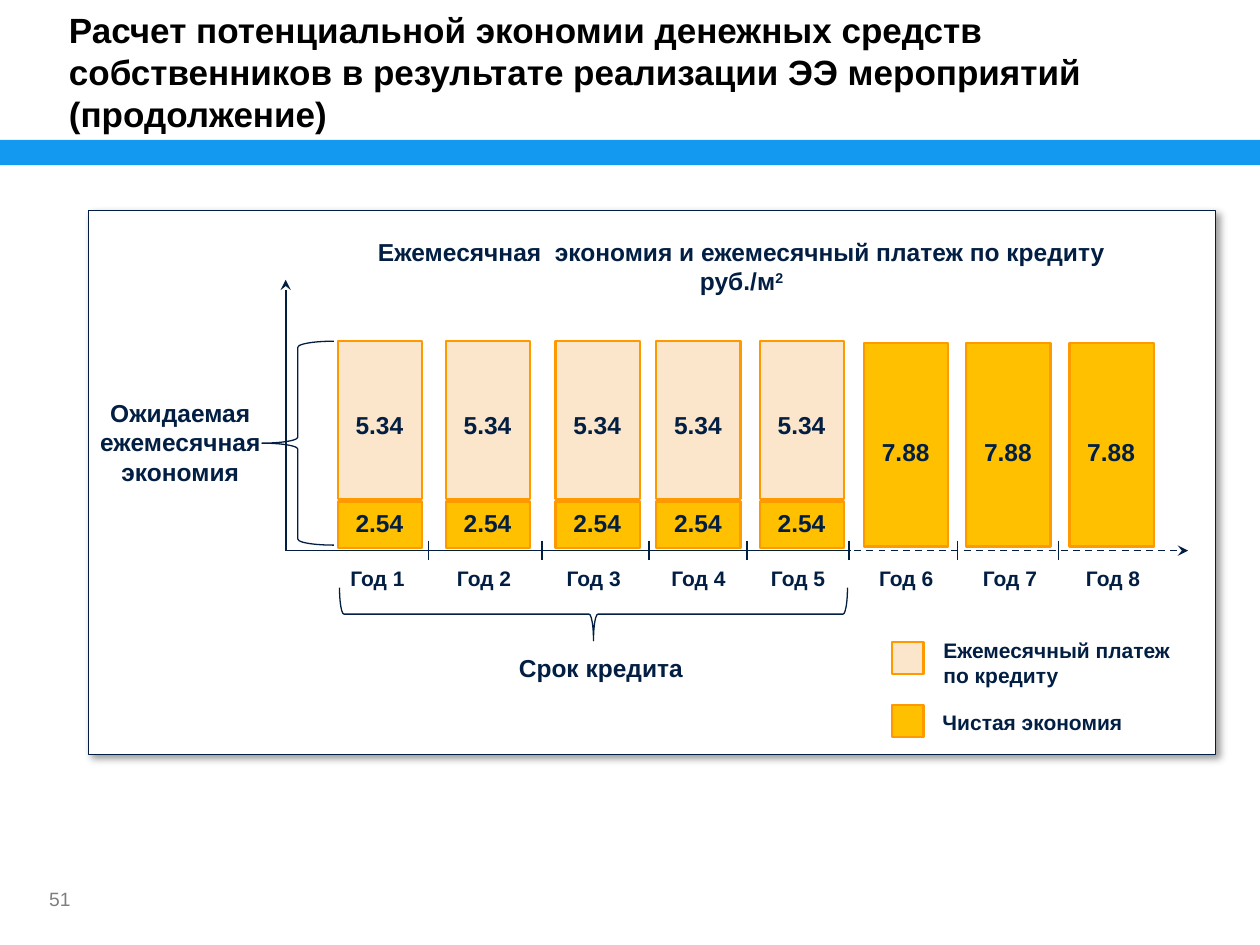
from dataclasses import dataclass
from typing import NamedTuple

from lxml.etree import SubElement
from pptx import Presentation
from pptx.dml.color import RGBColor
from pptx.enum.dml import MSO_LINE
from pptx.enum.shapes import MSO_CONNECTOR, MSO_SHAPE
from pptx.enum.text import MSO_ANCHOR, MSO_AUTO_SIZE, PP_ALIGN
from pptx.oxml.ns import qn
from pptx.util import Cm, Pt


@dataclass(frozen=True)
class Theme:
    font: str = "Arial"
    ink: str = "021F43"
    black: str = "000000"
    grey: str = "7F7F7F"
    white: str = "FFFFFF"
    band: str = "139AF0"
    payment: str = "FBE6CB"
    saving: str = "FFC000"
    outline: str = "FF9900"
    title_size: float = 20
    heading_size: float = 14
    label_size: float = 12
    number_size: float = 11
    thin: float = 0.75
    axis: float = 1
    bar: float = 1.25


class Box(NamedTuple):
    left: float
    top: float
    width: float
    height: float


class Point(NamedTuple):
    x: float
    y: float


class Segment(NamedTuple):
    top: float
    height: float
    fill: str
    value: str
    value_top: float


class Year(NamedTuple):
    bar_left: float
    label_left: float
    segments: tuple[Segment, ...]


class LegendEntry(NamedTuple):
    swatch: Box
    fill: str
    label: Box
    text: str


THEME = Theme()
BAR_WIDTH = 1.7
AXIS_Y = 11.1
ORIGIN = Point(5.76, AXIS_Y)
TICK_TOP, TICK_BOTTOM = 10.9, 11.28
TICKS = (8.64, 10.92, 13.08, 15.06, 17.12, 19.3, 21.34)

LOAN = (
    Segment(6.88, 3.18, THEME.payment, "5.34", 8.15),
    Segment(10.11, 0.94, THEME.saving, "2.54", 10.11),
)
AFTER_LOAN = (Segment(6.91, 4.11, THEME.saving, "7.88", 8.69),)

YEARS = (
    Year(6.81, 6.71, LOAN),
    Year(8.99, 8.86, LOAN),
    Year(11.2, 11.07, LOAN),
    Year(13.23, 13.18, LOAN),
    Year(15.32, 15.19, LOAN),
    Year(17.42, 17.37, AFTER_LOAN),
    Year(19.48, 19.46, AFTER_LOAN),
    Year(21.56, 21.54, AFTER_LOAN),
)

LEGEND = (
    LegendEntry(Box(17.98, 12.95, 0.64, 0.64), THEME.payment,
                Box(18.77, 12.73, 5.38, 1.27), "Ежемесячный платеж по кредиту"),
    LegendEntry(Box(17.98, 14.22, 0.64, 0.64), THEME.saving,
                Box(18.75, 14.17, 4.7, 0.76), "Чистая экономия"),
)


def add_figure(page, box: Box, kind=MSO_SHAPE.RECTANGLE, *, fill: str | None = None,
               line: str | None = None, width: float = THEME.thin, rotation: float = 0):
    shape = page.shapes.add_shape(kind, *map(Cm, box))
    shape.shadow.inherit = False
    shape.rotation = rotation
    if fill:
        shape.fill.solid()
        shape.fill.fore_color.rgb = RGBColor.from_string(fill)
    else:
        shape.fill.background()
    if line:
        shape.line.color.rgb = RGBColor.from_string(line)
        shape.line.width = Pt(width)
    else:
        shape.line.fill.background()
    return shape


def add_shadow(shape) -> None:
    effects = shape._element.spPr.find(qn("a:effectLst"))
    shadow = SubElement(effects, qn("a:outerShdw"), blurRad=str(Pt(4)), dist=str(Pt(3)),
                        dir="2700000", algn="tl", rotWithShape="0")
    colour = SubElement(shadow, qn("a:srgbClr"), val=THEME.black)
    SubElement(colour, qn("a:alpha"), val="40000")


def add_line(page, start: Point, end: Point, *, dashed: bool = False, arrow: bool = False) -> None:
    line = page.shapes.add_connector(MSO_CONNECTOR.STRAIGHT, *map(Cm, (*start, *end)))
    line.line.color.rgb = RGBColor.from_string(THEME.ink)
    line.line.width = Pt(THEME.axis)
    if dashed:
        line.line.dash_style = MSO_LINE.DASH
    properties = line._element.spPr
    if arrow:
        SubElement(properties.find(qn("a:ln")), qn("a:tailEnd"), type="stealth")
    SubElement(properties, qn("a:effectLst"))


def add_text(page, box: Box, text: str, *, size: float = THEME.heading_size,
             colour: str = THEME.ink, bold: bool = True, align=PP_ALIGN.CENTER,
             superscript: str = "") -> object:
    text_box = page.shapes.add_textbox(*map(Cm, box))
    frame = text_box.text_frame
    frame.word_wrap = True
    frame.auto_size = MSO_AUTO_SIZE.SHAPE_TO_FIT_TEXT
    frame.text = text
    if superscript:
        span = frame.paragraphs[-1].add_run()
        span.text = superscript
        span.font._element.set("baseline", "30000")
    for para in frame.paragraphs:
        para.alignment = align
        for span in para.runs:
            span.font.name = THEME.font
            span.font.size = Pt(size)
            span.font.bold = bold
            span.font.color.rgb = RGBColor.from_string(colour)
    return text_box


def add_year(page, number: int, year: Year) -> None:
    for segment in year.segments:
        add_figure(page, Box(year.bar_left, segment.top, BAR_WIDTH, segment.height),
                   fill=segment.fill, line=THEME.outline, width=THEME.bar)
        add_text(page, Box(year.bar_left + 0.04, segment.value_top, 1.6, 0.86), segment.value)
    add_text(page, Box(year.label_left, 11.28, 1.8, 0.76), f"Год {number}", size=THEME.label_size)


def add_legend_entry(page, entry: LegendEntry) -> None:
    add_figure(page, entry.swatch, fill=entry.fill, line=THEME.outline, width=THEME.bar)
    add_text(page, entry.label, entry.text, size=THEME.label_size, align=PP_ALIGN.LEFT)


def add_page_number(page) -> None:
    box = add_text(page, Box(0.99, 17.63, 1.52, 0.99), "51", size=THEME.number_size,
                   colour=THEME.grey, bold=False, align=PP_ALIGN.LEFT)
    frame = box.text_frame
    frame.auto_size = MSO_AUTO_SIZE.NONE
    frame.vertical_anchor = MSO_ANCHOR.MIDDLE
    frame.margin_left = frame.margin_right = frame.margin_top = frame.margin_bottom = 0


def main() -> None:
    deck = Presentation()
    deck.slide_width, deck.slide_height = Cm(25.4), Cm(19.05)
    page = deck.slides.add_slide(deck.slide_layouts[6])

    add_figure(page, Box(0, 2.82, 25.4, 0.51), fill=THEME.band)
    add_shadow(add_figure(page, Box(1.78, 4.24, 22.73, 10.97), fill=THEME.white, line=THEME.ink))
    add_text(page, Box(1.14, 0.05, 22.81, 2.82),
             "Расчет потенциальной экономии денежных средств собственников "
             "в результате реализации ЭЭ мероприятий (продолжение)",
             size=THEME.title_size, colour=THEME.black, align=PP_ALIGN.LEFT)
    add_page_number(page)

    add_line(page, ORIGIN, Point(17.15, AXIS_Y))
    add_line(page, Point(17.22, AXIS_Y), Point(23.95, AXIS_Y), dashed=True, arrow=True)
    add_line(page, ORIGIN, Point(ORIGIN.x, 5.64), arrow=True)
    for number, year in enumerate(YEARS, start=1):
        add_year(page, number, year)
    for tick in TICKS:
        add_line(page, Point(tick, TICK_TOP), Point(tick, TICK_BOTTOM))

    add_figure(page, Box(5.28, 6.88, 1.45, 4.11), MSO_SHAPE.LEFT_BRACE, line=THEME.ink)
    add_figure(page, Box(11.43, 7.26, 1.07, 10.24), MSO_SHAPE.LEFT_BRACE, line=THEME.ink,
               rotation=270)
    add_text(page, Box(6.76, 4.65, 16.38, 1.45),
             "Ежемесячная  экономия и ежемесячный платеж по кредиту\nруб./м", superscript="2")
    add_text(page, Box(1.63, 7.9, 4.01, 2.06), "Ожидаемая ежемесячная экономия")
    add_text(page, Box(9.5, 13.03, 5.23, 0.86), "Срок кредита")
    for entry in LEGEND:
        add_legend_entry(page, entry)

    deck.save("out.pptx")


if __name__ == "__main__":
    main()
